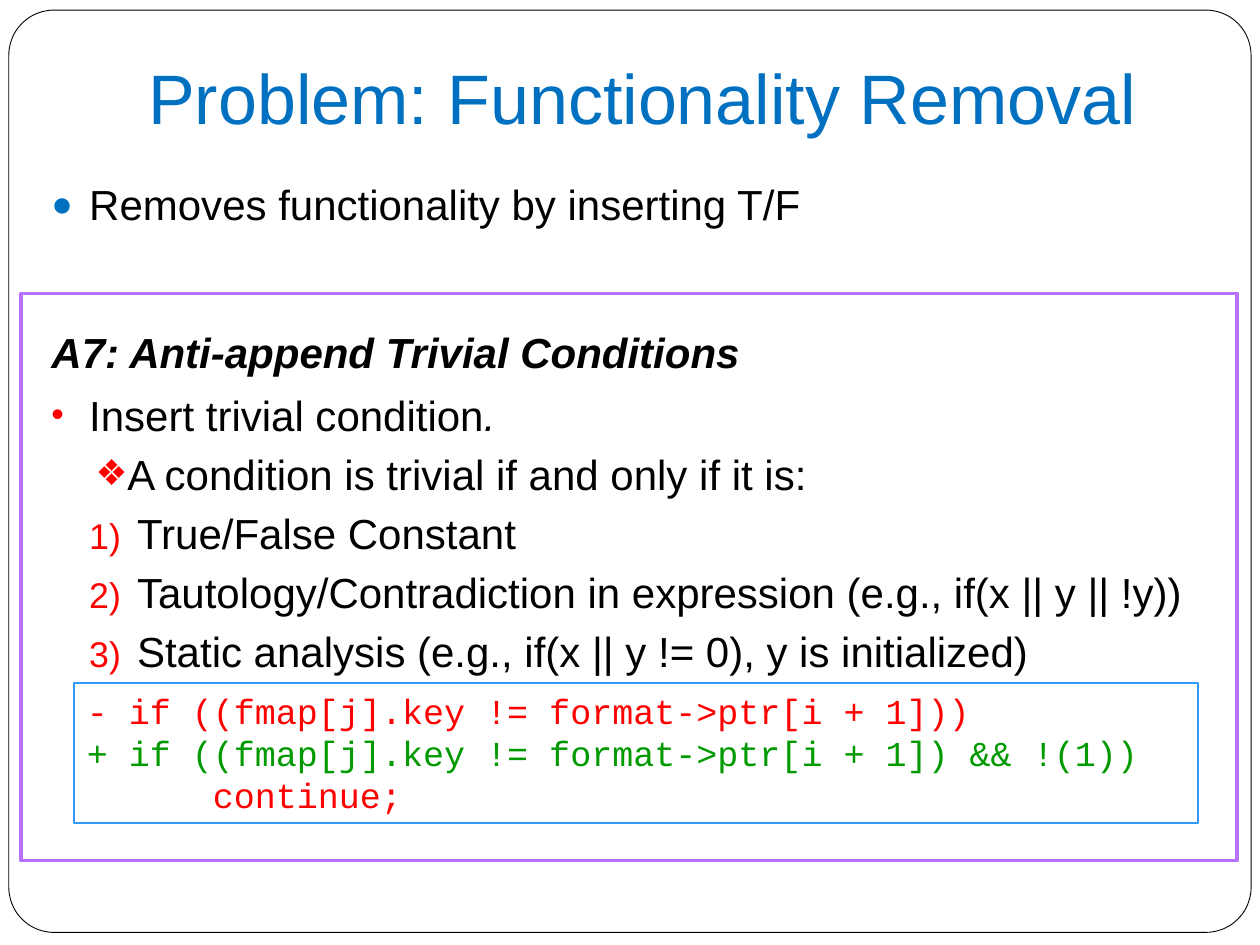
from lxml import etree
from pptx import Presentation
from pptx import util as u
from pptx.dml.color import RGBColor
from pptx.enum import shapes, text
from pptx.oxml.ns import qn

COLORS = {"white": "FFFFFF", "black": "000000", "title": "0070C0", "red": "FF0000",
          "green": "009900", "purple": "B870FF", "blue": "3399FF"}
COLS, ROWS = 100, 75  # slide grid

prs = Presentation()
prs.slide_width, prs.slide_height = u.Inches(10), u.Inches(7.5)


def place(box):
    """Turn a box in columns and rows into slide lengths."""
    x, y, w, h = box
    col, row = prs.slide_width / COLS, prs.slide_height / ROWS
    return [int(v) for v in (x * col, y * row, w * col, h * row)]


def rgb(name):
    return RGBColor.from_string(COLORS[name])


def add_run(p, words, size, color="black", font="Arial", bold=False, italic=False):
    r = p.add_run()
    r.text = words
    f = r.font
    f.size, f.name, f.bold, f.italic = u.Pt(size), font, bold, italic
    f.color.rgb = rgb(color)


def add_bullet(p, color, margin, hanging, char=None):
    """Give a paragraph a hanging bullet, or a number when there is no char."""
    pPr = p._p.get_or_add_pPr()
    pPr.set("marL", str(u.Inches(margin)))
    pPr.set("indent", str(-u.Inches(hanging)))
    clr = etree.SubElement(pPr, qn("a:buClr"))
    etree.SubElement(clr, qn("a:srgbClr"), val=COLORS[color])
    etree.SubElement(pPr, qn("a:buSzPct"), val="85000")
    etree.SubElement(pPr, qn("a:buFont"), typeface="Arial")
    if char:
        etree.SubElement(pPr, qn("a:buChar"), char=char)
    else:
        etree.SubElement(pPr, qn("a:buAutoNum"), type="arabicParenR")


def add_box(s, box, line, width, fill=None, kind=shapes.MSO_SHAPE.RECTANGLE):
    sp = s.shapes.add_shape(kind, *place(box))
    sp.shadow.inherit = False
    if fill:
        sp.fill.solid()
        sp.fill.fore_color.rgb = rgb(fill)
    else:
        sp.fill.background()
    sp.line.color.rgb = rgb(line)
    sp.line.width = u.Pt(width)
    return sp


def add_text(s, box):
    tf = s.shapes.add_textbox(*place(box)).text_frame
    tf.word_wrap = True
    return tf


def slide_border(s, box):
    sp = add_box(s, box, "black", 0.5, "white", shapes.MSO_SHAPE.ROUNDED_RECTANGLE)
    sp.adjustments[0] = 0.049
    s.shapes._spTree.insert(2, sp._element)  # behind the title


def title(s, box, words):
    sp = s.shapes.title
    sp.left, sp.top, sp.width, sp.height = place(box)
    tf = sp.text_frame
    tf.vertical_anchor = text.MSO_ANCHOR.BOTTOM
    tf.margin_bottom = u.Inches(0.1)
    p = tf.paragraphs[0]
    p.alignment = text.PP_ALIGN.CENTER
    add_run(p, words, 40, "title")


def summary(s, box, words):
    p = add_text(s, box).paragraphs[0]
    add_bullet(p, "title", 0.3, 0.3, "●")
    add_run(p, words, 24)


def pattern_panel(s, box):
    x, y, w, h = box
    add_box(s, box, "purple", 2.25)
    tf = add_text(s, (x + 1.4, y + 2.1, w - 2.7, h - 14))

    # Heading and main point
    add_run(tf.paragraphs[0], "A7: Anti-append Trivial Conditions", 24, bold=True, italic=True)
    p = tf.add_paragraph()
    p.space_before = u.Pt(7.2)
    add_bullet(p, "red", 0.3, 0.3, "•")
    add_run(p, "Insert trivial condition", 24)
    add_run(p, ".", 24, italic=True)

    # Definition and its numbered cases
    points = [("A condition is trivial if and only if it is:", 0.6, 0.25, "❖"),
              ("True/False Constant", 0.68, 0.38, None),
              ("Tautology/Contradiction in expression (e.g., if(x || y || !y))", 0.68, 0.38, None),
              ("Static analysis (e.g., if(x || y != 0), y is initialized)", 0.68, 0.38, None)]
    for words, margin, hanging, char in points:
        p = tf.add_paragraph()
        p.level = 1
        p.space_before = u.Pt(5)
        add_bullet(p, "red", margin, hanging, char)
        add_run(p, words, 24)


def code_diff(s, box):
    tf = add_box(s, box, "blue", 1, "white").text_frame
    tf.word_wrap = True
    lines = [("- if ((fmap[j].key != format->ptr[i + 1]))", "red", 0),
             ("+ if ((fmap[j].key != format->ptr[i + 1]) && !(1))", "green", 0),
             ("continue;", "red", 1)]
    for i, (code, color, indent) in enumerate(lines):
        p = tf.add_paragraph() if i else tf.paragraphs[0]
        p.alignment = text.PP_ALIGN.LEFT
        p._p.get_or_add_pPr().set("marL", str(u.Inches(indent)))
        add_run(p, code, 20, color, "Courier New")


def main():
    s = prs.slides.add_slide(prs.slide_layouts[5])
    slide_border(s, (0.7, 0.8, 98.6, 73.2))
    title(s, (6.9, -0.5, 88.1, 12.5), "Problem: Functionality Removal")
    summary(s, (3.1, 13.7, 95.4, 9), "Removes functionality by inserting T/F")
    pattern_panel(s, (1.7, 23.3, 96.5, 45))
    code_diff(s, (5.9, 54.2, 89.2, 11.1))
    prs.save("out.pptx")


if __name__ == "__main__":
    main()
